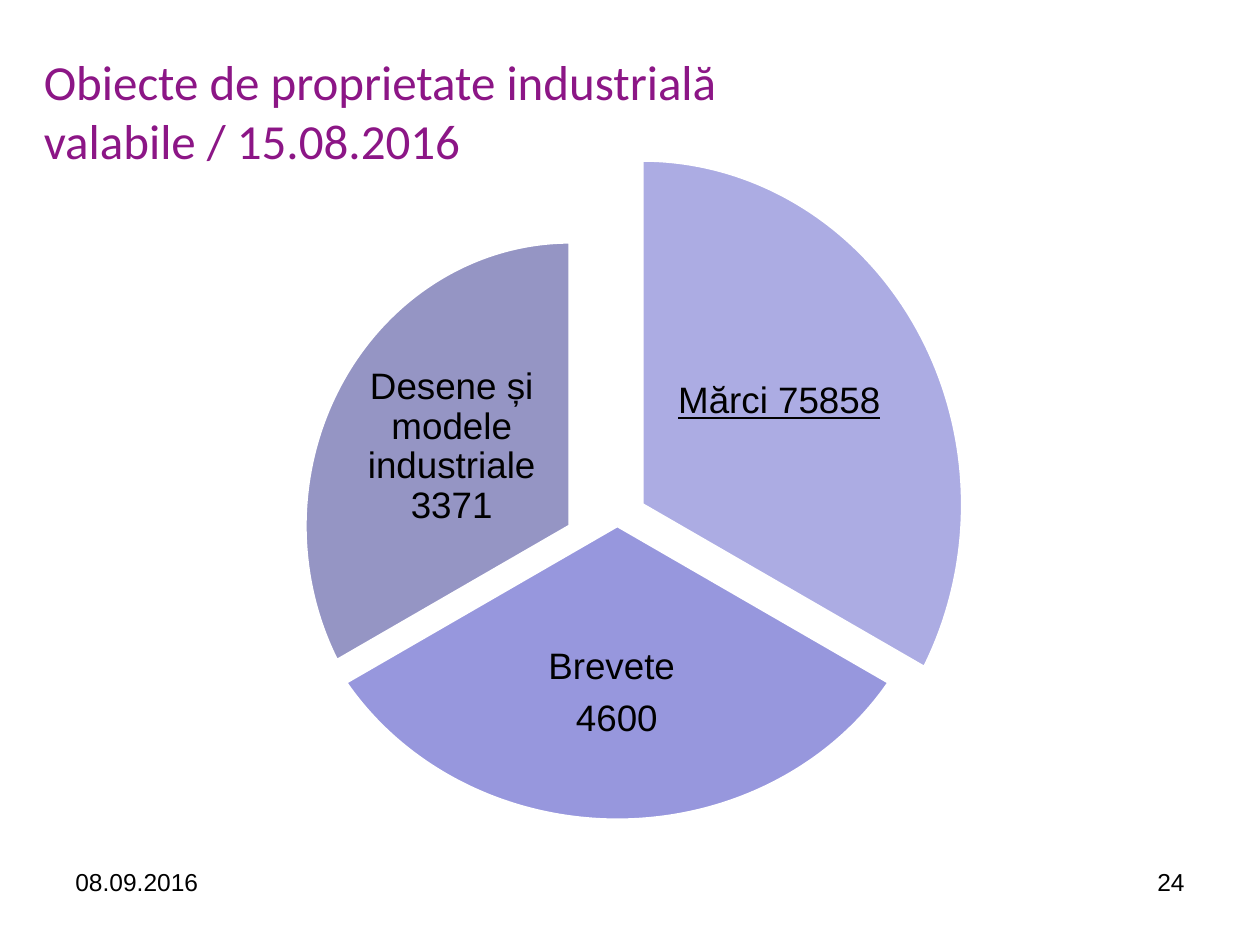
from typing import NamedTuple

from lxml.etree import SubElement
from pptx import Presentation
from pptx.dml.color import RGBColor
from pptx.enum.shapes import MSO_SHAPE as Shape
from pptx.enum.text import MSO_ANCHOR as Anchor, PP_ALIGN as Align
from pptx.oxml.ns import qn
from pptx.util import Inches, Pt

Box = tuple[float, float, float, float]


class Style(NamedTuple):
    size: float
    color: str = "000000"
    font: str = "Arial"
    align: Align = Align.LEFT
    anchor: Anchor = Anchor.TOP
    inset: tuple[float, float] = (0.1, 0.05)
    line: float = 1.0
    after: float = 0
    under: bool = False


class Slice(NamedTuple):
    box: Box
    start: int
    end: int
    color: str
    alpha: int
    label: Box
    lines: list[str]
    under: bool = False


TITLE = Style(28, "8C1686", "Calibri", anchor=Anchor.MIDDLE)
FOOT = Style(14)
LABEL = Style(21, align=Align.CENTER, anchor=Anchor.MIDDLE,
              inset=(0.03, 0.03), line=0.9, after=7.5)

SLICES = [
    Slice((2.55, 1.27, 5.09, 5.47), 270, 30, "A3A3E0", 90,
          (5.32, 2.28, 1.73, 1.82), ["Mărci 75858 "], True),
    Slice((2.35, 1.83, 5.1, 4.68), 30, 150, "6B6BCF", 70,
          (3.74, 4.78, 2.31, 1.45), ["Brevete ", "4600"]),
    Slice((2.42, 1.92, 4.21, 4.51), 150, 270, "2D2D8A", 50,
          (2.87, 2.8, 1.43, 1.5), ["Desene și modele industriale 3371"]),
]


def paint(target, color: str) -> None:
    target.rgb = RGBColor.from_string(color)


def add_text(shapes, box: Box, lines: list[str], style: Style) -> None:
    frame = shapes.add_textbox(*map(Inches, box)).text_frame
    frame.word_wrap = True
    frame.vertical_anchor = style.anchor
    side, edge = map(Inches, style.inset)
    frame.margin_left = frame.margin_right = side
    frame.margin_top = frame.margin_bottom = edge
    for i, text in enumerate(lines):
        para = frame.add_paragraph() if i else frame.paragraphs[0]
        para.text = text
        para.alignment = style.align
        para.line_spacing = style.line
        para.space_after = Pt(style.after)
        font = para.font
        font.name, font.size = style.font, Pt(style.size)
        font.underline = style.under
        paint(font.color, style.color)


def add_slice(shapes, part: Slice) -> None:
    pie = shapes.add_shape(Shape.PIE, *map(Inches, part.box))
    pie.shadow.inherit = False
    # Angles are stored in 1/60000 degree, adjustments scaled by 100000
    pie.adjustments[0] = part.start * 0.6
    pie.adjustments[1] = part.end * 0.6
    pie.fill.solid()
    paint(pie.fill.fore_color, part.color)
    tone = pie.fill._xPr.find(f".//{qn('a:srgbClr')}")
    SubElement(tone, qn("a:alpha"), val=str(part.alpha * 1000))
    paint(pie.line.color, "FFFFFF")
    pie.line.width = Pt(2)
    add_text(shapes, part.label, part.lines, LABEL._replace(under=part.under))


def main() -> None:
    deck = Presentation()
    deck.slide_width, deck.slide_height = Inches(10), Inches(7.5)
    shapes = deck.slides.add_slide(deck.slide_layouts[6]).shapes
    add_text(shapes, (0.5, 6.83, 2.33, 0.52), ["08.09.2016"], FOOT)
    add_text(shapes, (7.17, 6.83, 2.33, 0.52), ["24"],
             FOOT._replace(align=Align.RIGHT))
    add_text(shapes, (0.25, 0.25, 8.17, 1.25),
             ["Obiecte de proprietate industrială\nvalabile / 15.08.2016"], TITLE)
    for part in SLICES:
        add_slice(shapes, part)
    deck.save("out.pptx")


if __name__ == "__main__":
    main()
